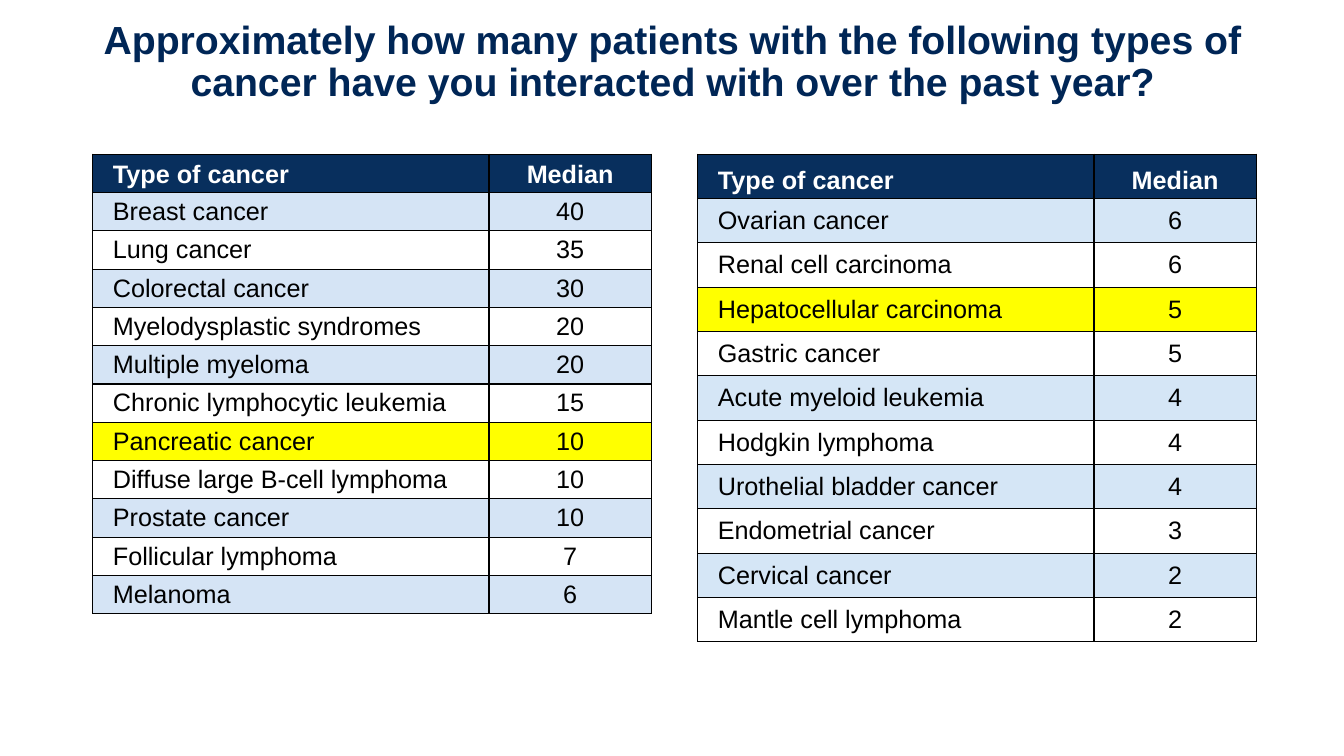
from lxml.etree import SubElement as add_element
from pptx import Presentation
from pptx.dml.color import RGBColor
from pptx.enum.text import MSO_ANCHOR as Anchor, PP_ALIGN as Align
from pptx.oxml.ns import qn
from pptx.util import Inches, Pt

COLORS = {
    "title": "002656",
    "header": "082F5D",
    "left_band": "D5E4F5",
    "right_band": "D5E6F6",
    "highlight": "FFFF00",
    "white": "FFFFFF",
    "black": "000000",
}

LEFT_MEDIANS = [
    ("Breast cancer", 40),
    ("Lung cancer", 35),
    ("Colorectal cancer", 30),
    ("Myelodysplastic syndromes", 20),
    ("Multiple myeloma", 20),
    ("Chronic lymphocytic leukemia", 15),
    ("Pancreatic cancer", 10),
    ("Diffuse large B-cell lymphoma", 10),
    ("Prostate cancer", 10),
    ("Follicular lymphoma", 7),
    ("Melanoma", 6),
]
RIGHT_MEDIANS = [
    ("Ovarian cancer", 6),
    ("Renal cell carcinoma", 6),
    ("Hepatocellular carcinoma", 5),
    ("Gastric cancer", 5),
    ("Acute myeloid leukemia", 4),
    ("Hodgkin lymphoma", 4),
    ("Urothelial bladder cancer", 4),
    ("Endometrial cancer", 3),
    ("Cervical cancer", 2),
    ("Mantle cell lymphoma", 2),
]
HIGHLIGHTED = {"Pancreatic cancer", "Hepatocellular carcinoma"}


class SurveyPage:
    font_name = "Arial"
    column_widths = (3.93, 1.61)

    def __init__(self, deck):
        self.page = deck.slides.add_slide(deck.slide_layouts[5])

    def style_font(self, para, size, color, bold):
        font = para.font
        font.name = self.font_name
        font.size = Pt(size)
        font.bold = bold
        font.color.rgb = RGBColor.from_string(COLORS[color])

    def title(self, text):
        box = self.page.shapes.title
        box.left, box.top = Inches(0.92), Inches(0)
        box.width, box.height = Inches(11.5), Inches(1.25)
        box.text_frame.text = text
        box.text_frame.word_wrap = True
        box.text_frame.vertical_anchor = Anchor.MIDDLE
        para = box.text_frame.paragraphs[0]
        para.alignment = Align.CENTER
        para.line_spacing = 0.9
        self.style_font(para, 28, "title", True)

    def borders(self, cell):
        properties = cell._tc.get_or_add_tcPr()
        for side in ("lnL", "lnR", "lnT", "lnB"):
            line = add_element(properties, qn(f"a:{side}"), w=str(Pt(1)))
            fill = add_element(line, qn("a:solidFill"))
            add_element(fill, qn("a:srgbClr"), val=COLORS["black"])

    def cell(self, cell, text, fill, is_header, centered):
        self.borders(cell)
        cell.fill.solid()
        cell.fill.fore_color.rgb = RGBColor.from_string(COLORS[fill])
        cell.margin_left = cell.margin_right = Inches(0.2)
        cell.margin_top = cell.margin_bottom = Inches(0.04)
        cell.vertical_anchor = Anchor.BOTTOM if is_header else Anchor.MIDDLE
        cell.text = str(text)
        para = cell.text_frame.paragraphs[0]
        para.alignment = Align.CENTER if centered else Align.LEFT
        self.style_font(para, 18, "white" if is_header else "black", is_header)

    def median_table(self, left, row_height, band, medians):
        rows = [("Type of cancer", "Median"), *medians]
        frame = self.page.shapes.add_table(
            len(rows), len(self.column_widths), Inches(left), Inches(1.53),
            Inches(sum(self.column_widths)), Inches(row_height * len(rows)),
        )
        table = frame.table
        for column, width in zip(table.columns, self.column_widths):
            column.width = Inches(width)
        for row_index, values in enumerate(rows):
            table.rows[row_index].height = Inches(row_height)
            if row_index == 0:
                fill = "header"
            elif values[0] in HIGHLIGHTED:
                fill = "highlight"
            else:
                fill = band if row_index % 2 else "white"
            for column_index, value in enumerate(values):
                self.cell(table.cell(row_index, column_index), value, fill,
                          row_index == 0, column_index == 1)


def main():
    deck = Presentation()
    deck.slide_width, deck.slide_height = Inches(13.33), Inches(7.5)
    survey = SurveyPage(deck)
    survey.title("Approximately how many patients with the following types of "
                 "cancer have you interacted with over the past year?")
    survey.median_table(0.92, 0.38, "left_band", LEFT_MEDIANS)
    survey.median_table(6.92, 0.44, "right_band", RIGHT_MEDIANS)
    deck.save("out.pptx")


if __name__ == "__main__":
    main()
